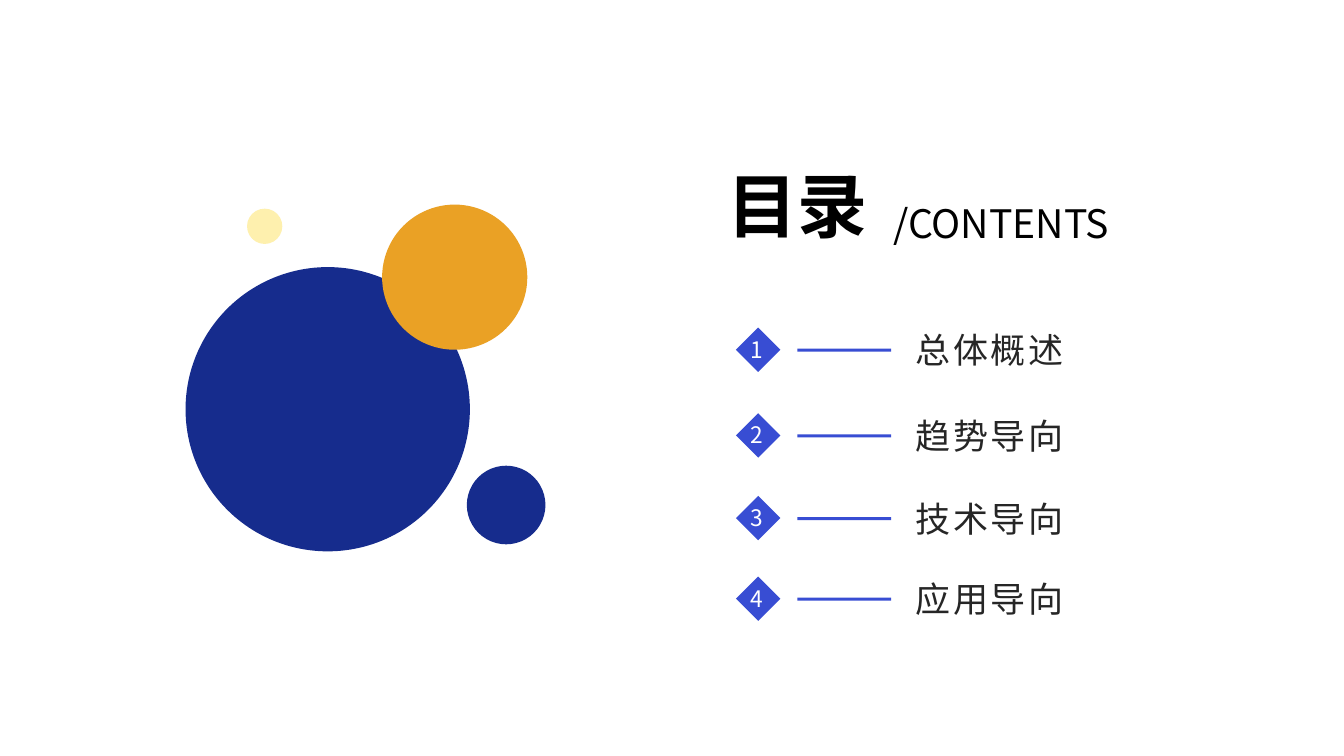
"""Build a contents slide with a numbered agenda and a cluster of circles."""
from dataclasses import dataclass

from lxml.etree import SubElement
from pptx import Presentation
from pptx.dml.color import RGBColor
from pptx.enum.shapes import MSO_SHAPE
from pptx.enum.text import MSO_ANCHOR
from pptx.oxml.ns import qn
from pptx.util import Pt

EMU_PER_PX = 9144


@dataclass(frozen=True)
class Theme:
    font: str = "Noto Sans CJK SC"
    black: str = "000000"
    label: str = "262626"
    white: str = "FFFFFF"
    accent: str = "384DD3"
    navy: str = "162C8D"
    orange: str = "EAA125"
    cream: str = "FEF0AE"
    title_size: float = 50
    subtitle_size: float = 28
    label_size: float = 25
    number_size: float = 16.2


class ContentsSlide:
    def __init__(self, deck, theme):
        self.theme = theme
        self.slide = deck.slides.add_slide(deck.slide_layouts[6])

    def filled(self, preset, box, color, shapes=None):
        target = self.slide.shapes if shapes is None else shapes
        shape = target.add_shape(preset, *(n * EMU_PER_PX for n in box))
        shape.shadow.inherit = False
        shape.fill.solid()
        shape.fill.fore_color.rgb = RGBColor.from_string(color)
        shape.line.fill.background()

    def circles(self, specs):
        group = self.slide.shapes.add_group_shape()
        for left, top, size, color in specs:
            self.filled(MSO_SHAPE.OVAL, (left, top, size, size), color, group.shapes)

    def text(self, words, box, size, color, anchor=MSO_ANCHOR.BOTTOM,
             insets=(0, 0, 0, 0), bold=False, tracking=0, line_spacing=None):
        textbox = self.slide.shapes.add_textbox(*(n * EMU_PER_PX for n in box))
        frame = textbox.text_frame
        frame.text = words
        frame.word_wrap = True
        frame.vertical_anchor = anchor
        (frame.margin_left, frame.margin_top,
         frame.margin_right, frame.margin_bottom) = (n * EMU_PER_PX for n in insets)
        paragraph = frame.paragraphs[0]
        if line_spacing:
            paragraph.line_spacing = line_spacing
        run = paragraph.runs[0]
        run.font.size = Pt(size)
        run.font.bold = bold
        run.font.color.rgb = RGBColor.from_string(color)
        run.font.name = self.theme.font
        properties = run.font._element
        SubElement(properties, qn("a:ea")).set("typeface", self.theme.font)
        if tracking:
            properties.set("spc", str(tracking * 100))

    def agenda_item(self, number, label, top):
        theme = self.theme
        self.filled(MSO_SHAPE.DIAMOND, (730, top, 44, 44), theme.accent)
        self.filled(MSO_SHAPE.RECTANGLE, (791, top + 21, 93, 3), theme.accent)
        self.text(str(number), (735, top + 3, 34, 38), theme.number_size,
                  theme.white, MSO_ANCHOR.TOP, (10, 5, 10, 5))
        self.text(label, (898, top + 2, 203, 40), theme.label_size,
                  theme.label, MSO_ANCHOR.MIDDLE, (10, 5, 0, 5), tracking=2)


def main():
    deck = Presentation()
    deck.slide_width = 1333 * EMU_PER_PX
    deck.slide_height = 750 * EMU_PER_PX
    theme = Theme()
    contents = ContentsSlide(deck, theme)

    contents.text("目录", (722, 157, 149, 88), theme.title_size, theme.black, bold=True)
    contents.text("/CONTENTS", (886, 197, 228, 47), theme.subtitle_size,
                  theme.black, line_spacing=0.8)

    agenda = [("总体概述", 325), ("趋势导向", 410), ("技术导向", 492), ("应用导向", 572)]
    for number, (label, top) in enumerate(agenda, start=1):
        contents.agenda_item(number, label, top)

    contents.circles([
        (184, 265, 282, theme.navy),
        (463, 462, 78, theme.navy),
        (379, 203, 144, theme.orange),
        (245, 207, 35, theme.cream),
    ])
    deck.save("out.pptx")


if __name__ == "__main__":
    main()
